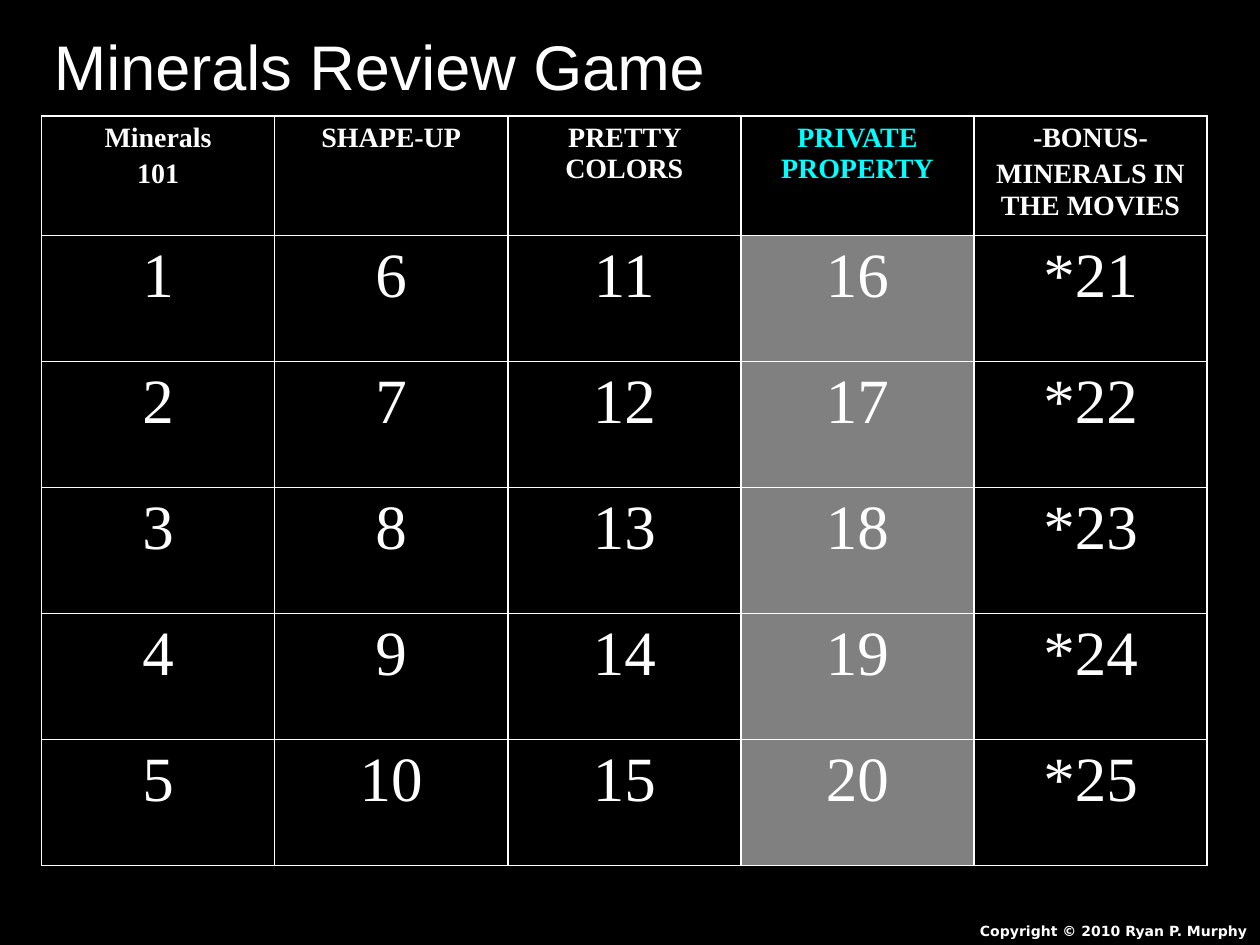
"""Build the Minerals Review Game board slide."""
from dataclasses import dataclass

from lxml import etree
from pptx import Presentation
from pptx.dml.color import RGBColor
from pptx.enum import text
from pptx.oxml import ns
from pptx.util import Inches, Pt

WHITE, BLACK, CYAN, GRAY = "FFFFFF", "000000", "00FFFF", "808080"
SERIF = "Times New Roman"
ROWS = 5


@dataclass
class Category:
    title: str
    color: str = WHITE
    fill: str | None = None
    prefix: str = ""


@dataclass
class Label:
    wording: str
    box: tuple[float, float, float, float]
    size: int
    face: str
    bold: bool = False
    align: text.PP_ALIGN = text.PP_ALIGN.LEFT


CATEGORIES = [
    Category("Minerals\n101"),
    Category("SHAPE-UP"),
    Category("PRETTY COLORS"),
    Category("PRIVATE\vPROPERTY", CYAN, GRAY),
    Category("-BONUS-\nMINERALS IN THE MOVIES", prefix="*"),
]
LABELS = [
    Label("Copyright © 2010 Ryan P. Murphy", (7.08, 7.27, 2.92, 0.23), 8,
          "DejaVu Sans", True, text.PP_ALIGN.RIGHT),
    Label("Minerals Review Game", (0.33, 0.17, 8.67, 0.7), 36, "Arial"),
]


def rgb(value: str) -> RGBColor:
    return RGBColor.from_string(value)


def set_font(p, size: int, face: str, color: str, bold: bool) -> None:
    p.font.size, p.font.name, p.font.bold = Pt(size), face, bold
    p.font.color.rgb = rgb(color)


def set_space_before(p, percent: int) -> None:
    spacing = etree.Element(ns.qn("a:spcBef"))
    etree.SubElement(spacing, ns.qn("a:spcPct"), val=str(percent * 1000))
    p._p.get_or_add_pPr().insert(0, spacing)


def set_borders(cell, color: str, width: float) -> None:
    tc_pr = cell._tc.get_or_add_tcPr()
    for side in ("lnL", "lnR", "lnT", "lnB"):
        line = etree.SubElement(tc_pr, ns.qn(f"a:{side}"), w=str(Pt(width)))
        fill = etree.SubElement(line, ns.qn("a:solidFill"))
        etree.SubElement(fill, ns.qn("a:srgbClr"), val=color)


def fill_cell(cell, wording: str, size: int, color: str, bold: bool,
              fill: str | None) -> None:
    set_borders(cell, WHITE, 1)
    if fill:
        cell.fill.solid()
        cell.fill.fore_color.rgb = rgb(fill)
    else:
        cell.fill.background()
    cell.text_frame.text = wording
    for p in cell.text_frame.paragraphs:
        p.alignment = text.PP_ALIGN.CENTER
        set_font(p, size, SERIF, color, bold)
        set_space_before(p, 20)


def add_board(s) -> None:
    table = s.shapes.add_table(ROWS + 1, len(CATEGORIES), Inches(0.33), Inches(0.92),
                               Inches(9.25), Inches(5.95)).table
    table.first_row = table.horz_banding = False
    for i, row in enumerate(table.rows):
        row.height = Inches(1 if i else 0.95)
    for c, category in enumerate(CATEGORIES):
        table.columns[c].width = Inches(1.85)
        fill_cell(table.cell(0, c), category.title, 16, category.color, True, None)
        for r in range(1, ROWS + 1):
            fill_cell(table.cell(r, c), f"{category.prefix}{c * ROWS + r}", 36,
                      WHITE, False, category.fill)


def add_label(s, label: Label) -> None:
    tf = s.shapes.add_textbox(*map(Inches, label.box)).text_frame
    tf.word_wrap = True
    tf.auto_size = text.MSO_AUTO_SIZE.SHAPE_TO_FIT_TEXT
    tf.text = label.wording
    p = tf.paragraphs[0]
    p.alignment = label.align
    set_font(p, label.size, label.face, WHITE, label.bold)


def main() -> None:
    prs = Presentation()
    prs.slide_width, prs.slide_height = Inches(10), Inches(7.5)
    s = prs.slides.add_slide(prs.slide_layouts[6])
    s.background.fill.solid()
    s.background.fill.fore_color.rgb = rgb(BLACK)
    add_board(s)
    for label in LABELS:
        add_label(s, label)
    prs.save("out.pptx")


if __name__ == "__main__":
    main()
